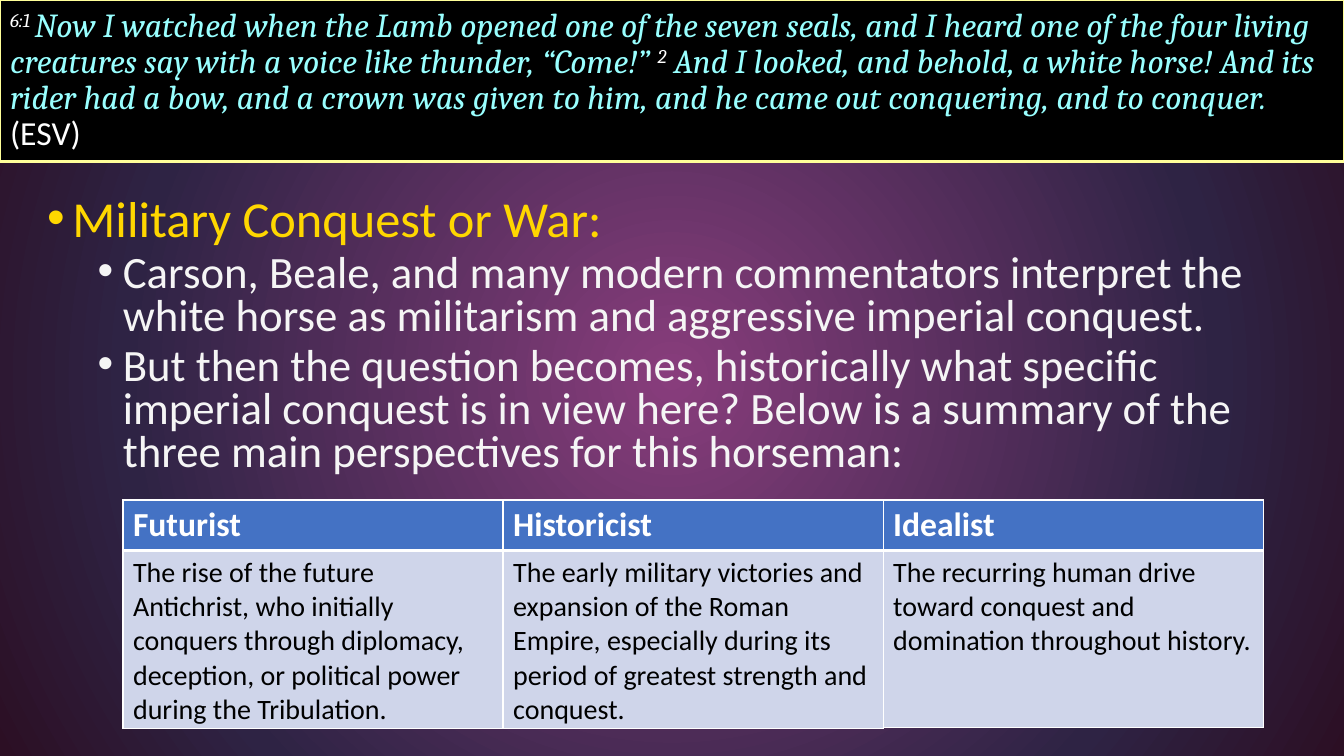
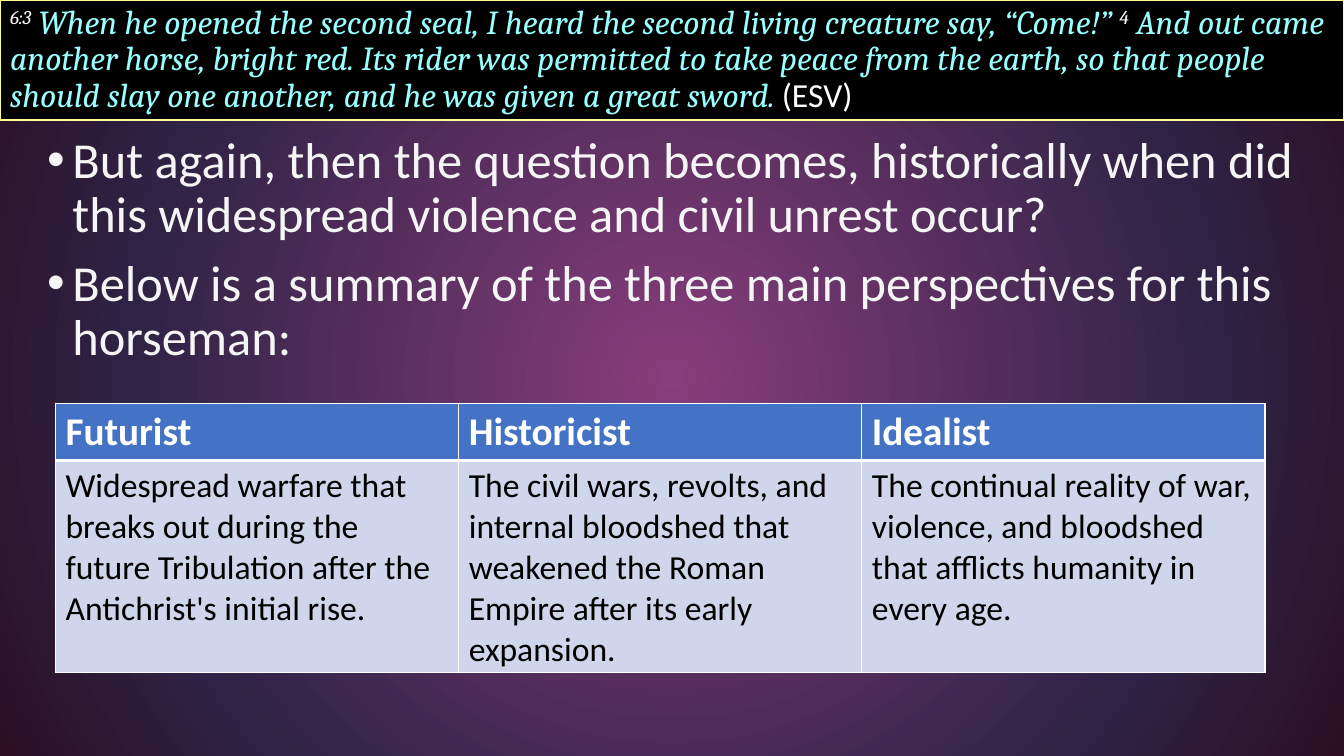
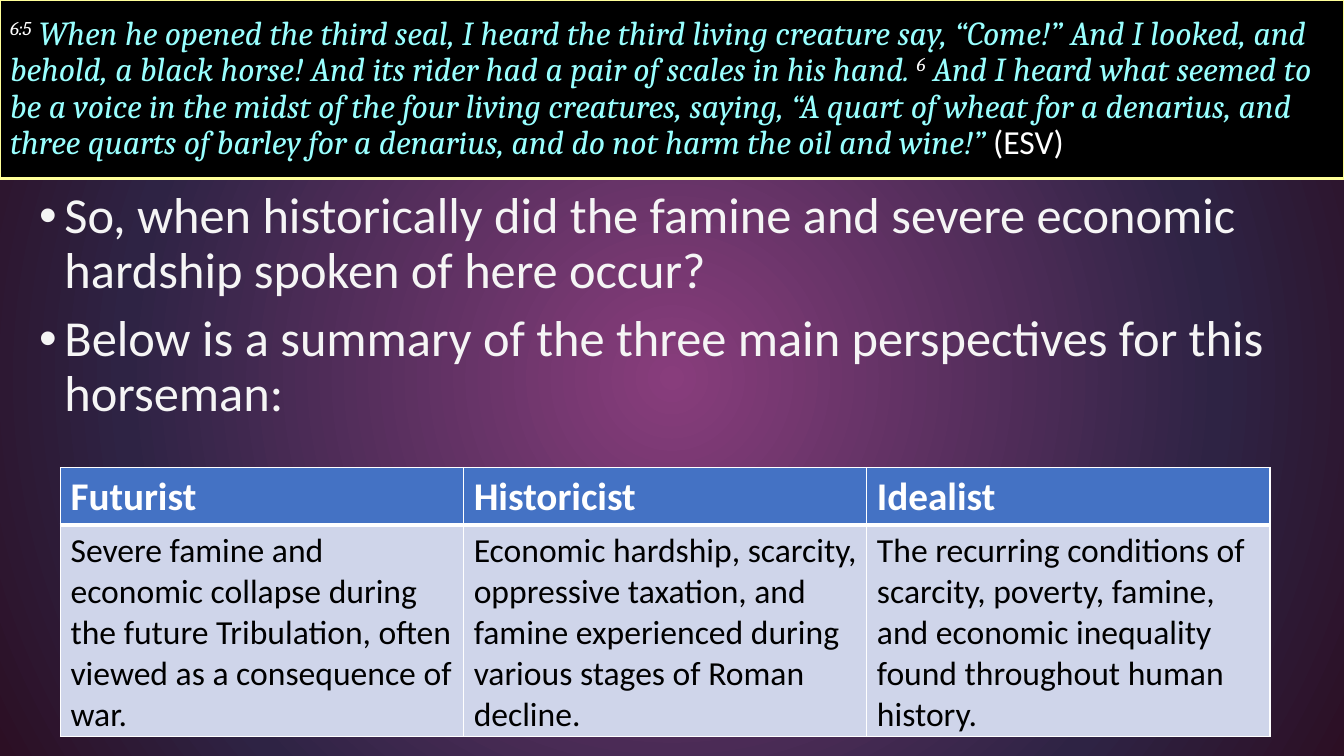
from lxml import etree
from pptx import Presentation
from pptx.dml.color import RGBColor
from pptx.enum.text import MSO_ANCHOR, MSO_AUTO_SIZE, PP_ALIGN
from pptx.oxml import parse_xml
from pptx.oxml.ns import nsdecls, qn
from pptx.util import Inches, Pt

LEFT, MIDDLE, NO_FIT = PP_ALIGN.LEFT, MSO_ANCHOR.MIDDLE, MSO_AUTO_SIZE.NONE
TITLE_ONLY = 5
SANS, SERIF = "Calibri", "Cambria"
COLORS = {
    "white": "FFFFFF", "black": "000000", "verse": "99FFFF", "frame": "FFFF99",
    "gold": "FFD700", "text": "F5F5F5", "header": "4472C4", "cell": "CFD5EA",
}
BACKGROUND = [(0, "883D7C"), (71, "2E2344"), (100, "2C0F24")]
# Per outline level: text size, left indent in inches, space before
LEVELS = [(36, 0.25, 10), (32, 0.75, 5)]
HEADINGS = ["Futurist", "Historicist", "Idealist"]
SUMMARY = "Below is a summary of the three main perspectives for this horseman:"

# Positions and sizes are percentages of the slide's width and height.
# A verse alternates verse numbers and passages.
SLIDES = [
    {
        "title_height": 21.33,
        "verse": [
            "6:1 ",
            "Now I watched when the Lamb opened one of the seven seals, and I heard one of "
            "the four living creatures say with a voice like thunder, “Come!” ",
            "2",
            " And I looked, and behold, a white horse! And its rider had a bow, and a crown "
            "was given to him, and he came out conquering, and to conquer. ",
        ],
        "body": (2.78, 25.6, 94.6, 38.27), "spacing": 0.8,
        "points": [
            (0, "gold", "Military Conquest or War:"),
            (1, "text", "Carson, Beale, and many modern commentators interpret the white "
                        "horse as militarism and aggressive imperial conquest."),
            (1, "text", "But then the question becomes, historically what specific imperial "
                        "conquest is in view here? Below is a summary of the three main "
                        "perspectives for this horseman:"),
        ],
        "table": (9.15, 66.13, 28.28), "rows": (6.67, 23.47), "sizes": (24, 20),
        "views": [
            "The rise of the future Antichrist, who initially conquers through diplomacy, "
            "deception, or political power during the Tribulation.",
            "The early military victories and expansion of the Roman Empire, especially "
            "during its period of greatest strength and conquest.",
            "The recurring human drive toward conquest and domination throughout history.",
        ],
    },
    {
        "title_height": 15.87,
        "verse": [
            "6:3",
            " When he opened the second seal, I heard the second living creature say, “Come!” ",
            "4",
            " And out came another horse, bright red. Its rider was permitted to take peace "
            "from the earth, so that people should slay one another, and he was given a "
            "great sword. ",
        ],
        "body": (2.78, 17.2, 94.6, 36.13), "spacing": 0.9,
        "points": [
            (0, "text", "But again, then the question becomes, historically when did this "
                        "widespread violence and civil unrest occur?"),
            (0, "text", SUMMARY),
        ],
        "table": (4.13, 53.33, 30), "rows": (7.6, 28), "sizes": (28, 24),
        "views": [
            "Widespread warfare that breaks out during the future Tribulation after the "
            "Antichrist's initial rise.",
            "The civil wars, revolts, and internal bloodshed that weakened the Roman Empire "
            "after its early expansion.",
            "The continual reality of war, violence, and bloodshed that afflicts humanity "
            "in every age.",
        ],
    },
    {
        "title_height": 23.6,
        "verse": [
            "6:5",
            " When he opened the third seal, I heard the third living creature say, “Come!” "
            "And I looked, and behold, a black horse! And its rider had a pair of scales in "
            "his hand. ",
            "6",
            " And I heard what seemed to be a voice in the midst of the four living "
            "creatures, saying, “A quart of wheat for a denarius, and three quarts of barley "
            "for a denarius, and do not harm the oil and wine!” ",
        ],
        "body": (2.18, 24.53, 94.6, 36.13), "spacing": 0.9,
        "points": [
            (0, "text", "So, when historically did the famine and severe economic hardship "
                        "spoken of here occur?"),
            (0, "text", SUMMARY),
        ],
        "table": (4.5, 61.87, 30), "rows": (7.6, 28), "sizes": (28, 24),
        "views": [
            "Severe famine and economic collapse during the future Tribulation, often viewed "
            "as a consequence of war.",
            "Economic hardship, scarcity, oppressive taxation, and famine experienced during "
            "various stages of Roman decline.",
            "The recurring conditions of scarcity, poverty, famine, and economic inequality "
            "found throughout human history.",
        ],
    },
]


def style(r, size, color, font=SANS, bold=False, italic=False):
    f = r.font
    f.name, f.size, f.bold, f.italic = font, Pt(size), bold, italic
    f.color.rgb = RGBColor.from_string(COLORS[color])


def add_borders(cell, top, bottom):
    """Draw white cell borders; top and bottom are widths in points."""
    tcPr = cell._tc.get_or_add_tcPr()
    for side, width in (("L", 1), ("R", 1), ("T", top), ("B", bottom)):
        tcPr.append(parse_xml(
            f'<a:ln{side} {nsdecls("a")} w="{Pt(width)}"><a:solidFill>'
            f'<a:srgbClr val="{COLORS["white"]}"/></a:solidFill></a:ln{side}>'))


prs = Presentation()
prs.slide_width, prs.slide_height = Inches(13.33), Inches(7.5)
COL, ROW = prs.slide_width / 100, prs.slide_height / 100

# Radial background shared by all slides
master = prs.slide_master
master.background.fill.background()
bgPr = master.element.find(".//" + qn("p:bgPr"))
stops = "".join(f'<a:gs pos="{pos * 1000}"><a:srgbClr val="{color}"/></a:gs>'
                for pos, color in BACKGROUND)
bgPr.replace(bgPr[0], parse_xml(
    f'<a:gradFill {nsdecls("a")} rotWithShape="1"><a:gsLst>{stops}</a:gsLst>'
    '<a:path path="circle"><a:fillToRect l="50000" t="50000" r="50000" b="50000"/></a:path>'
    '</a:gradFill>'))

for data in SLIDES:
    s = prs.slides.add_slide(prs.slide_layouts[TITLE_ONLY])

    # Verse band
    title = s.shapes.title
    title.left, title.top = 0, 0
    title.width, title.height = prs.slide_width, round(data["title_height"] * ROW)
    title.fill.solid()
    title.fill.fore_color.rgb = RGBColor.from_string(COLORS["black"])
    title.line.color.rgb = RGBColor.from_string(COLORS["frame"])
    title.line.width = Pt(2)
    tf = title.text_frame
    tf.auto_size, tf.vertical_anchor, tf.word_wrap = NO_FIT, MIDDLE, True
    p = tf.paragraphs[0]
    p.alignment, p.line_spacing = LEFT, 0.9
    for i, text in enumerate(data["verse"]):
        r = p.add_run()
        r.text = text
        is_number = i % 2 == 0
        style(r, 24, "white" if is_number else "verse", SERIF, italic=True)
        if is_number:
            r._r.get_or_add_rPr().set("baseline", "30000")
    r = p.add_run()
    r.text = "(ESV)"
    style(r, 24, "white")

    # Bulleted points
    left, top, width, height = data["body"]
    tf = s.shapes.add_textbox(round(left * COL), round(top * ROW),
                              round(width * COL), round(height * ROW)).text_frame
    tf.word_wrap = True
    for i, (level, color, text) in enumerate(data["points"]):
        size, indent, before = LEVELS[level]
        p = tf.add_paragraph() if i else tf.paragraphs[0]
        p.text, p.level, p.line_spacing = text, level, data["spacing"]
        p.space_before = Pt(before if i else 0)
        pPr = p._p.get_or_add_pPr()
        pPr.set("marL", str(Inches(indent)))
        pPr.set("indent", str(-Inches(0.25)))
        etree.SubElement(pPr, qn("a:buFont")).set("typeface", "Arial")
        etree.SubElement(pPr, qn("a:buChar")).set("char", "•")
        style(p.runs[0], size, color)

    # One single-column table per perspective, side by side
    left, top, width = data["table"]
    for i, texts in enumerate(zip(HEADINGS, data["views"])):
        table = s.shapes.add_table(
            2, 1, round((left + i * width) * COL), round(top * ROW),
            round(width * COL), round(sum(data["rows"]) * ROW)).table
        table.horz_banding = False
        for row, text in enumerate(texts):
            is_header = row == 0
            table.rows[row].height = round(data["rows"][row] * ROW)
            cell = table.cell(row, 0)
            add_borders(cell, *((1, 3) if is_header else (3, 1)))
            cell.fill.solid()
            cell.fill.fore_color.rgb = RGBColor.from_string(
                COLORS["header" if is_header else "cell"])
            cell.text_frame.text = text
            style(cell.text_frame.paragraphs[0].runs[0], data["sizes"][row],
                  "white" if is_header else "black", bold=is_header)

prs.save("out.pptx")
